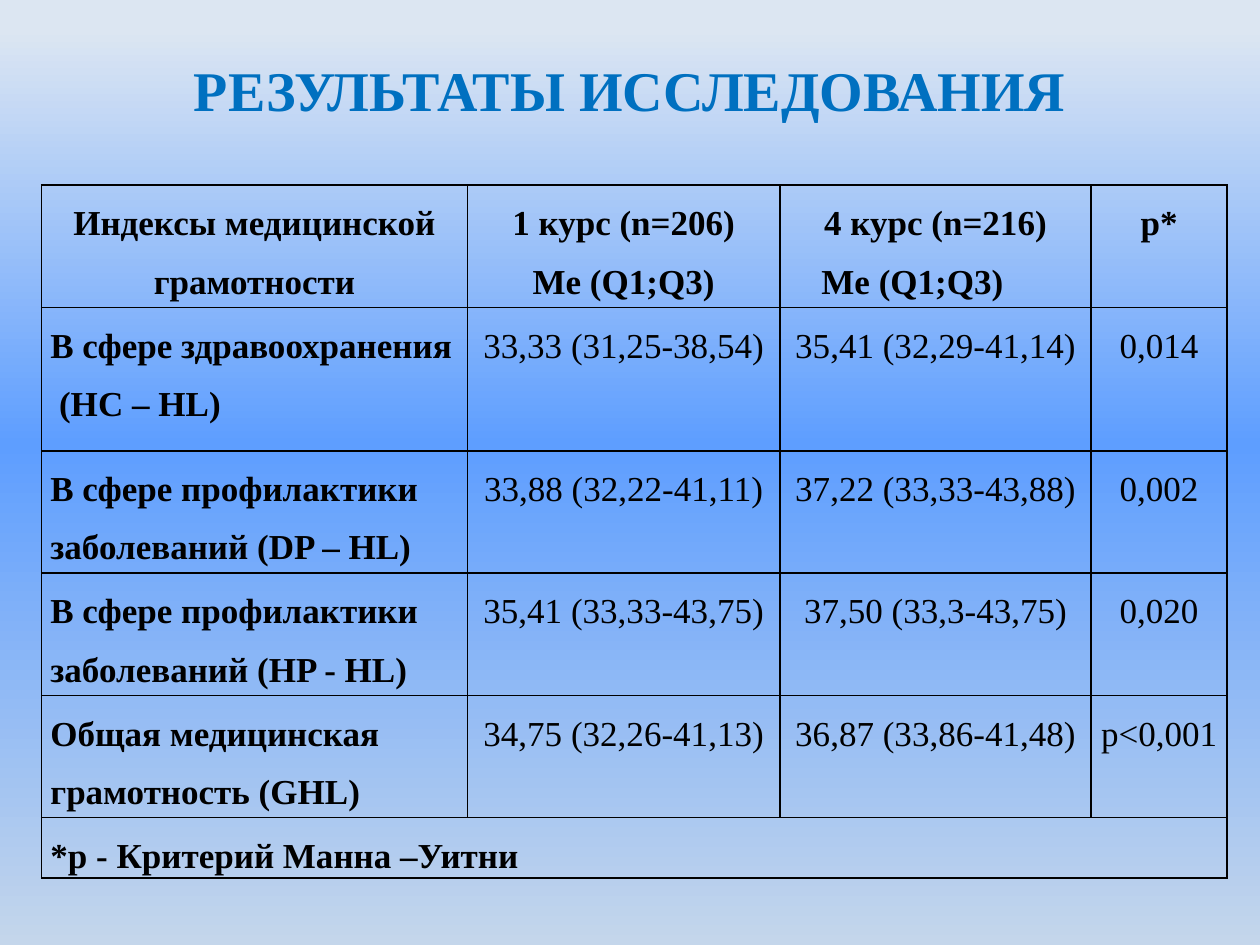
from copy import deepcopy

from lxml.etree import SubElement
from pptx import Presentation
from pptx.dml.color import RGBColor
from pptx.enum.text import MSO_ANCHOR, PP_ALIGN
from pptx.oxml.ns import qn
from pptx.util import Inches, Pt


def color(value):
    return RGBColor.from_string(value)


def write(frame, text, size=20, bold=False, ink="000000", align=PP_ALIGN.CENTER, spacing=None):
    frame.text = text
    for para in frame.paragraphs:
        para.alignment = align
        para.line_spacing = spacing
        for span in para.runs:
            span.font.name = "Times New Roman"
            span.font.size = Pt(size)
            span.font.bold = bold
            span.font.color.rgb = color(ink)


deck = Presentation()
deck.slide_width, deck.slide_height = Inches(10), Inches(7.5)
page = deck.slides.add_slide(deck.slide_layouts[5])

backdrop = page.background.fill
backdrop.gradient()
backdrop.gradient_angle = 270
stop_list = page._element.xpath(".//a:gsLst")[0]
stop_list.append(deepcopy(stop_list[0]))
stops = [(0.03, "DCE6F2"), (0.47, "5E9EFF"), (1, "C4D6EB")]
for stop, (position, shade) in zip(backdrop.gradient_stops, stops):
    stop.position = position
    stop.color.rgb = color(shade)

title = page.shapes.title
title.left, title.top = Inches(0.5), Inches(0.08)
title.width, title.height = Inches(9), Inches(1.25)
title.text_frame.vertical_anchor = MSO_ANCHOR.MIDDLE
write(title.text_frame, "РЕЗУЛЬТАТЫ ИССЛЕДОВАНИЯ", size=32, bold=True, ink="0070C0")

rows = [
    ["Индексы медицинской грамотности", "1 курс (n=206)\nMe (Q1;Q3)", "4 курс (n=216)\nMe (Q1;Q3)", "p*"],
    ["В сфере здравоохранения\n (HC – HL)", "33,33 (31,25-38,54)", "35,41 (32,29-41,14)", "0,014"],
    ["В сфере профилактики заболеваний (DP – HL)", "33,88 (32,22-41,11)", "37,22 (33,33-43,88)", "0,002"],
    ["В сфере профилактики заболеваний (HP - HL)", "35,41 (33,33-43,75)", "37,50 (33,3-43,75)", "0,020"],
    ["Общая медицинская грамотность (GHL)", "34,75 (32,26-41,13)", "36,87 (33,86-41,48)", "р<0,001"],
    ["*р - Критерий Манна –Уитни", "", "", ""],
]
widths = [3.38, 2.48, 2.47, 1.08]
heights = [0.97, 1.14, 0.97, 0.97, 0.97, 0.48]

table = page.shapes.add_table(
    len(rows), len(widths), Inches(0.33), Inches(1.47), Inches(sum(widths)), Inches(sum(heights))
).table
table.first_row = table.horz_banding = False
for column, width in zip(table.columns, widths):
    column.width = Inches(width)
for row, height in zip(table.rows, heights):
    row.height = Inches(height)
table.cell(5, 0).merge(table.cell(5, 3))

for row_index, texts in enumerate(rows):
    for column_index, text in enumerate(texts):
        cell = table.cell(row_index, column_index)
        cell.margin_left = cell.margin_right = Inches(0.07)
        cell.margin_top = cell.margin_bottom = 0
        is_header, is_label = row_index == 0, column_index == 0
        if not cell.is_spanned:
            write(
                cell.text_frame,
                text,
                bold=is_header or is_label,
                align=PP_ALIGN.LEFT if is_label and not is_header else PP_ALIGN.CENTER,
                spacing=1.5,
            )
        properties = cell._tc.get_or_add_tcPr()
        for side in ("lnL", "lnR", "lnT", "lnB"):
            border = SubElement(properties, qn(f"a:{side}"), w=str(Pt(1)))
            fill = SubElement(border, qn("a:solidFill"))
            SubElement(fill, qn("a:srgbClr"), val="000000")
        cell.fill.background()

course, median = table.cell(0, 2).text_frame.paragraphs
median.alignment = PP_ALIGN.LEFT
for para, margin, indent in [(course, 0.38, -0.38), (median, 0.26, 0)]:
    para_properties = para._p.get_or_add_pPr()
    para_properties.set("marL", str(Inches(margin)))
    para_properties.set("indent", str(Inches(indent)))

deck.save("out.pptx")
